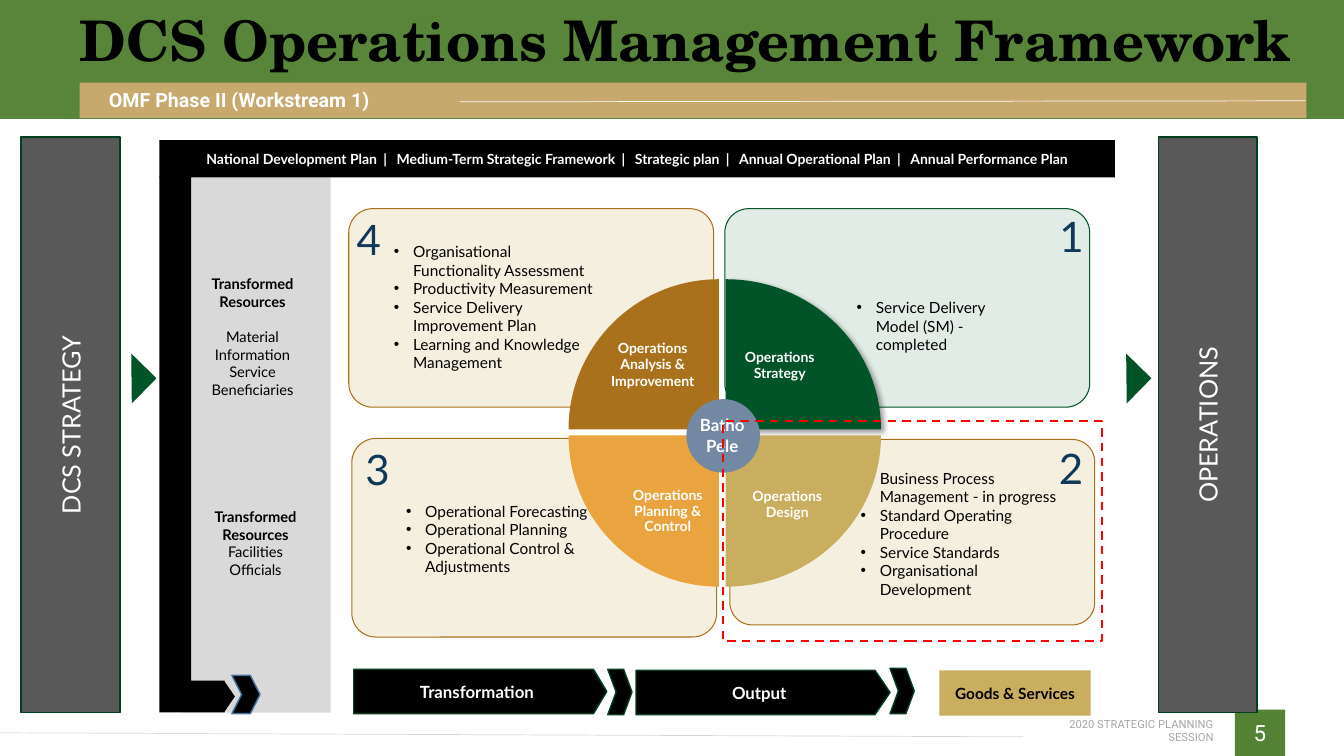
from dataclasses import dataclass
from typing import NamedTuple, Optional

from lxml.etree import SubElement
from pptx import Presentation
from pptx.dml.color import RGBColor as Rgb
from pptx.enum.dml import MSO_LINE_DASH_STYLE as Dash
from pptx.enum.shapes import MSO_CONNECTOR_TYPE as Link, MSO_SHAPE as Kind
from pptx.enum.text import MSO_ANCHOR as Anchor, PP_ALIGN as Align
from pptx.oxml.ns import qn
from pptx.util import Inches, Pt

# Grid: 133.33 columns by 75 rows of square cells
CELL = Inches(0.1)
BOW = 0.552  # handle length of a quarter arc


@dataclass(frozen=True)
class Theme:
    band: str = "588539"
    leaf: str = "548235"
    sand: str = "C7A96E"
    white: str = "FFFFFF"
    black: str = "000000"
    slate: str = "595959"
    edge: str = "003E1D"
    green: str = "005427"
    mint: str = "E1ECE6"
    cream: str = "F4EFDF"
    brown: str = "A9711B"
    gold: str = "CAAE5F"
    amber: str = "E9A43F"
    pale: str = "D9D9D9"
    mute: str = "A6A6A6"
    navy: str = "103959"
    steel: str = "7288A3"
    blue: str = "43739E"
    red: str = "FF0000"
    body: str = "Lato"
    sub: str = "Roboto"
    head: str = "TeX Gyre Schola"
    title: float = 40
    digit: float = 30
    side: float = 18
    page: float = 16
    phase: float = 14
    step: float = 12
    item: float = 11
    note: float = 10.5
    label: float = 10
    foot: float = 8


T = Theme()


class Box(NamedTuple):
    x: float
    y: float
    w: float
    h: float


class Inset(NamedTuple):
    left: float = 1
    top: float = 0.5
    right: float = 1
    bottom: float = 0.5


FLUSH = Inset(0, 0, 0, 0)


class Panel(NamedTuple):
    box: Box
    fill: str
    edge: str
    digit: str
    spot: Box
    items: list[str]
    list_box: Box
    anchor: Anchor = Anchor.TOP
    inset: Inset = Inset()


class Wedge(NamedTuple):
    start: tuple[float, float]
    end: tuple[float, float]
    hub: tuple[float, float]
    fill: str


class Label(NamedTuple):
    text: str
    box: Box
    inset: Inset
    lead: float = 0.9
    fill: Optional[str] = None


class Step(NamedTuple):
    label: str
    box: Box
    adj: float
    tip: Box


def cells(*sizes: float) -> list[int]:
    return [round(n * CELL) for n in sizes]


def write(shape, text: str | list[str], *, size: float, color: str = T.black,
          font: str = T.body, bold: bool = False, heads: int = 0,
          align: Align = Align.CENTER, anchor: Anchor = Anchor.MIDDLE,
          inset: Inset = Inset(), lead: Optional[float] = None, gap: float = 0,
          bullet: bool = False, turn: bool = False, sep: str = "") -> None:
    """Fill a shape with text; `heads` lines are bold, `sep` marks are set wide."""
    frame = shape.text_frame
    frame.word_wrap = True
    frame.vertical_anchor = anchor
    (frame.margin_left, frame.margin_top,
     frame.margin_right, frame.margin_bottom) = cells(*inset)
    if turn:
        shape.element.txBody.bodyPr.set("vert", "vert270")
    for i, line in enumerate([text] if isinstance(text, str) else text):
        para = frame.paragraphs[0] if i == 0 else frame.add_paragraph()
        para.alignment = align
        if lead:
            para.line_spacing = lead
        if gap and i == heads:
            para.space_before = Pt(gap)
        if bullet:
            props = para._p.get_or_add_pPr()
            props.set("marL", str(Inches(0.19)))
            props.set("indent", str(-Inches(0.19)))
            SubElement(props, qn("a:buFont"), typeface="Arial")
            SubElement(props, qn("a:buChar"), char="•")
        parts = line.split(sep) if sep else [line]
        for part in [p for word in parts for p in (sep, word)][1:]:
            run = para.add_run()
            run.text = part
            run.font.name, run.font.size = font, Pt(size)
            run.font.bold = bold or i < heads
            run.font.color.rgb = Rgb.from_string(color)
            if part == sep:
                run.font._element.set("spc", "220")


def paint(shape, fill: Optional[str], edge: Optional[str] = None,
          width: float = 1) -> None:
    shape.shadow.inherit = False
    if fill:
        shape.fill.solid()
        shape.fill.fore_color.rgb = Rgb.from_string(fill)
    else:
        shape.fill.background()
    if edge:
        shape.line.color.rgb = Rgb.from_string(edge)
        shape.line.width = Pt(width)
    else:
        shape.line.fill.background()


def draw(slide, kind: Kind, box: Box, fill: Optional[str], edge: Optional[str] = None,
         width: float = 1, adj: tuple[float, ...] = (), spin: float = 0):
    shape = slide.shapes.add_shape(kind, *cells(*box))
    for i, part in enumerate(adj):
        shape.adjustments[i] = part
    shape.rotation = spin
    paint(shape, fill, edge, width)
    return shape


def text_box(slide, box: Box, text: str | list[str], **style) -> None:
    write(slide.shapes.add_textbox(*cells(*box)), text, **style)


def rule(slide, ends: Box, color: str) -> None:
    line = slide.shapes.add_connector(Link.STRAIGHT, *cells(*ends))
    line.line.color.rgb = Rgb.from_string(color)
    line.line.width = Pt(0.5)
    SubElement(line.element.spPr, qn("a:effectLst"))


def draw_panel(slide, panel: Panel) -> None:
    draw(slide, Kind.ROUNDED_RECTANGLE, panel.box, panel.fill, panel.edge, 0.75, (0.121,))
    text_box(slide, panel.list_box, panel.items, size=T.item, align=Align.LEFT,
             anchor=panel.anchor, inset=panel.inset, bullet=True)
    spot = draw(slide, Kind.ROUNDED_RECTANGLE, panel.spot, None)
    write(spot, panel.digit, size=T.digit, color=T.navy)


def draw_wedge(slide, wedge: Wedge):
    pen = slide.shapes.build_freeform(*cells(*wedge.start))
    pen.add_line_segments([cells(*wedge.end), cells(*wedge.hub)], close=True)
    shape = pen.convert_to_shape()
    paint(shape, wedge.fill)
    # Bend the outer side into a quarter arc
    start, end, hub = [(int(p.get("x")), int(p.get("y")))
                       for p in shape.element.iter(qn("a:pt"))][:3]
    side = next(shape.element.iter(qn("a:lnTo")))
    side.tag = qn("a:cubicBezTo")
    for dot in side.findall(qn("a:pt")):
        side.remove(dot)
    hands = [[p + BOW * (far - c) for p, far, c in zip(near, other, hub)]
             for near, other in ((start, end), (end, start))]
    for x, y in (*hands, end):
        SubElement(side, qn("a:pt"), x=str(round(x)), y=str(round(y)))
    return shape


def cast(shape) -> None:
    glow = SubElement(shape.element.spPr.find(qn("a:effectLst")), qn("a:outerShdw"),
                      blurRad=str(Pt(4)), dist=str(Pt(3)), dir="2700000")
    tint = SubElement(glow, qn("a:srgbClr"), val=T.black)
    SubElement(tint, qn("a:alpha"), val="40000")


def draw_label(slide, label: Label) -> None:
    style = dict(size=T.label, color=T.white, bold=True, inset=label.inset, lead=label.lead)
    if label.fill:
        write(draw(slide, Kind.RECTANGLE, label.box, label.fill), label.text, **style)
    else:
        text_box(slide, label.box, label.text, **style)


def draw_step(slide, step: Step) -> None:
    bar = draw(slide, Kind.PENTAGON, step.box, T.black, T.edge, adj=(step.adj,))
    write(bar, step.label, size=T.step, color=T.white, bold=True)
    draw(slide, Kind.CHEVRON, step.tip, T.black, T.edge, adj=(0.345,))


PANELS = [
    Panel(Box(34.6, 20.7, 36.2, 19.7), T.cream, T.brown, "4", Box(33.9, 20.5, 5.4, 6.4),
          ["Organisational Functionality Assessment", "Productivity Measurement",
           "Service Delivery Improvement Plan", "Learning and Knowledge Management"],
          Box(38.1, 21, 22.4, 18.9), Anchor.MIDDLE),
    Panel(Box(34.9, 43.5, 36.2, 19.7), T.cream, T.brown, "3", Box(34.2, 43, 6.5, 7),
          ["Operational Forecasting", "Operational Planning",
           "Operational Control & Adjustments"], Box(39.3, 49.3, 24.6, 11.4)),
    Panel(Box(71.9, 20.7, 36.2, 19.7), T.mint, T.green, "1", Box(103.9, 20.8, 4.2, 5.1),
          ["Service Delivery Model (SM) - completed"], Box(84, 29.1, 15.5, 8.9)),
    Panel(Box(72.4, 43.6, 36.2, 18.4), T.cream, T.brown, "2", Box(103.9, 44.7, 4.2, 3.4),
          ["Business Process Management - in progress", "Standard Operating Procedure",
           "Service Standards", "Organisational Development"],
          Box(84.4, 44.2, 22.7, 17), inset=Inset(top=2.3)),
]
WEDGES = [
    Wedge((56.4, 42.6), (71.3, 27.7), (71.3, 42.6), T.brown),
    Wedge((72, 27.7), (87.4, 42.6), (72, 42.6), T.green),
    Wedge((87.4, 43.2), (72, 58.2), (72, 43.2), T.gold),
    Wedge((71.3, 58.2), (56.4, 43.2), (71.3, 43.2), T.amber),
]
LABELS = [
    Label("Operations Analysis & Improvement", Box(57.7, 30.9, 14.1, 12.2),
          Inset(bottom=2.2), 1),
    Label("Operations Design", Box(72.9, 45.8, 10.4, 6.6), Inset(top=2.5), fill=T.gold),
    Label("Operations Planning & Control", Box(60.6, 46.5, 11.3, 6.5), Inset(top=2.5)),
]
STEPS = [
    Step("Transformation", Box(35.1, 66.4, 25.1, 4.4), 0.3, Box(60.3, 66.4, 2.4, 4.5)),
    Step("Output", Box(63.1, 66.5, 25.2, 4.4), 0.34, Box(88.3, 66.3, 2.4, 4.5)),
]
PLANS = ["National Development Plan", "Medium-Term Strategic Framework", "Strategic plan",
         "Annual Operational Plan", "Annual Performance Plan"]


def build(slide) -> None:
    # Footer
    page = draw(slide, Kind.RECTANGLE, Box(122.5, 70.4, 5, 4.6), T.leaf)
    write(page, "5", size=T.page, color=T.white, font=T.sub)
    text_box(slide, Box(101.5, 71.8, 18.9, 1.3), "2020 STRATEGIC PLANNING SESSION",
             size=T.foot, color=T.mute, font=T.sub, align=Align.RIGHT, inset=FLUSH)
    rule(slide, Box(101.5, 73.1, 0, 72.7), T.pale)

    # Title band
    draw(slide, Kind.RECTANGLE, Box(0, 0, 133.33, 11.8), T.band)
    draw(slide, Kind.ROUNDED_RECTANGLE, Box(7.9, 8.2, 121.7, 3.5), T.sand, adj=(0,))
    text_box(slide, Box(10.8, 8.7, 34.8, 2.4), "OMF Phase II (Workstream 1)", size=T.phase,
             color=T.white, font=T.sub, bold=True, align=Align.LEFT, inset=FLUSH)
    rule(slide, Box(45.6, 10.1, 129.5, 10), T.white)
    text_box(slide, Box(6.9, -0.2, 125.6, 9), "DCS Operations Management Framework",
             size=T.title, font=T.head, bold=True, align=Align.LEFT, lead=0.9)

    # Side pillars and their pointers
    for x, name, tip in ((2.1, "DCS STRATEGY", 11.3), (114.9, "OPERATIONS", 110)):
        side = draw(slide, Kind.RECTANGLE, Box(x, 13.6, 9.8, 57.1), T.slate, T.edge)
        write(side, name, size=T.side, color=T.white, turn=True)
        draw(slide, Kind.RIGHT_TRIANGLE, Box(tip, 35.8, 3.5, 3.5), T.green, spin=224.4)

    # Resource column
    draw(slide, Kind.RECTANGLE, Box(18.1, 17.6, 14.7, 53.1), T.pale)
    for box, lines, gap in (
            (Box(19, 26.8, 12.1, 16.3), ["Material", "Information", "Service Beneficiaries"],
             12.6),
            (Box(19.3, 49.9, 12.1, 9.8), ["Facilities", "Officials"], 0)):
        text_box(slide, box, ["Transformed Resources", *lines], size=T.note, heads=1,
                 gap=gap, anchor=Anchor.TOP)

    # Plan bar and output row
    bar = draw(slide, Kind.RECTANGLE, Box(15.8, 13.9, 94.8, 3.7), T.black)
    write(bar, " | ".join(PLANS), size=T.label, color=T.white, bold=True, sep=" | ")
    goods = draw(slide, Kind.RECTANGLE, Box(93.2, 66.5, 15, 4.5), T.gold)
    write(goods, "Goods & Services", size=T.item, bold=True)
    for step in STEPS:
        draw_step(slide, step)

    # Panels, wheel and hub
    for panel in PANELS:
        draw_panel(slide, panel)
    for wedge in WEDGES:
        shape = draw_wedge(slide, wedge)
        if wedge.fill == T.green:
            cast(shape)
            write(shape, "Operations Strategy", size=T.label, color=T.white, bold=True,
                  inset=Inset(0.9, 5.6, 5.6, 3.3), lead=0.9)
    for label in LABELS:
        draw_label(slide, label)
    draw(slide, Kind.OVAL, Box(68.1, 39.6, 7.3, 7.3), T.steel)
    text_box(slide, Box(68.3, 40.7, 6.7, 5), "Batho Pele", size=T.step, color=T.white,
             bold=True, anchor=Anchor.TOP)

    # Flow arrow and focus frame
    draw(slide, Kind.BENT_UP_ARROW, Box(-7, 40.3, 53.1, 7.5), T.black,
         adj=(0.423, 0.2, 0.137), spin=90)
    draw(slide, Kind.CHEVRON, Box(23, 67, 2.8, 3.8), T.black, T.blue, adj=(0.345,))
    focus = draw(slide, Kind.RECTANGLE, Box(71.7, 41.8, 37.6, 21.8), None, T.red, 1.5)
    focus.line.dash_style = Dash.DASH


def main() -> None:
    deck = Presentation()
    deck.slide_width, deck.slide_height = cells(133.33, 75)
    build(deck.slides.add_slide(deck.slide_layouts[6]))
    deck.save("out.pptx")


if __name__ == "__main__":
    main()
